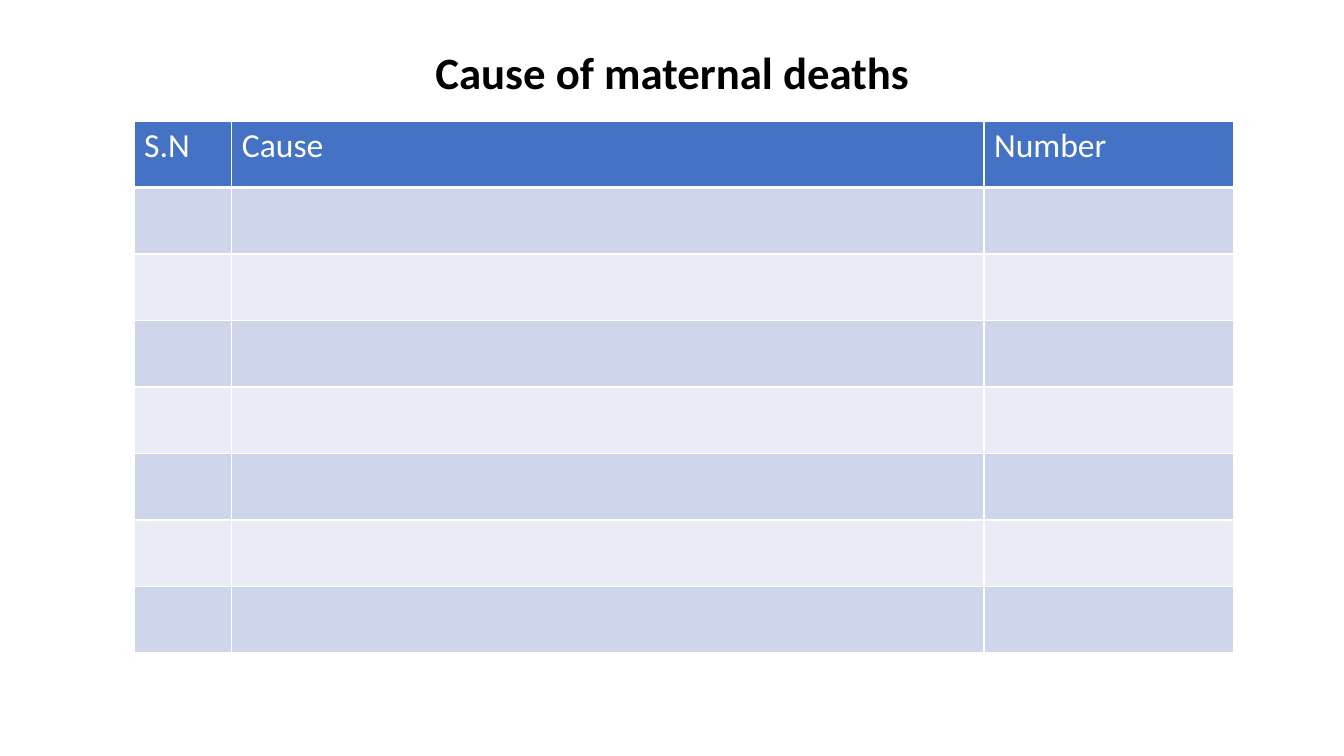
from dataclasses import dataclass
from pptx import Presentation
from pptx.dml.color import RGBColor as Rgb
from pptx.enum.text import MSO_ANCHOR as Anchor, PP_ALIGN as Align
from pptx.oxml import parse_xml
from pptx.oxml.ns import nsdecls
from pptx.util import Pt

PX = 9144  # one px is a hundredth of an inch


@dataclass(frozen=True)
class Theme:
    font: str = "Calibri"
    ink: str = "000000"
    white: str = "FFFFFF"
    head: str = "4472C4"
    bands: tuple = ("CFD5EA", "E9EBF5")
    title: int = 32
    label: int = 24
    thin: int = 1
    thick: int = 3


THEME = Theme()
HEADS = ("S.N", "Cause", "Number")
COLS = (97, 746, 248)
ROWS, ROW = 8, 66


def box(*sizes):
    return [size * PX for size in sizes]


def style(font, size, color, bold):
    look = {"name": THEME.font, "size": Pt(size), "bold": bold}
    for key, value in look.items():
        setattr(font, key, value)
    font.color.rgb = Rgb.from_string(color)


def write(frame, text, size, color, bold=False):
    para = frame.paragraphs[0]
    run = para.add_run()
    run.text = text
    style(run.font, size, color, bold)
    return para


def add_title(slide, text):
    title = slide.shapes.title
    place = dict(zip(("left", "top", "width", "height"), box(92, 29, 1150, 91)))
    for key, value in place.items():
        setattr(title, key, value)
    frame = title.text_frame
    frame.vertical_anchor = Anchor.MIDDLE
    para = write(frame, text, THEME.title, THEME.ink, True)
    para.alignment = Align.CENTER
    para.line_spacing = 0.9


def paint(cell, color, base):
    # Borders come before the fill in the cell properties
    props = cell._tc.get_or_add_tcPr()
    for side in "LRTB":
        width = Pt(base if side == "B" else THEME.thin)
        props.append(parse_xml(
            f'<a:ln{side} {nsdecls("a")} w="{width}"><a:solidFill>'
            f'<a:srgbClr val="{THEME.white}"/></a:solidFill></a:ln{side}>'))
    cell.fill.solid()
    cell.fill.fore_color.rgb = Rgb.from_string(color)


def add_grid(slide):
    place = box(133, 120, sum(COLS), ROWS * ROW)
    table = slide.shapes.add_table(ROWS, len(COLS), *place).table
    for col, width in zip(table.columns, COLS):
        col.width = width * PX

    # Header row, then alternating bands
    for cell, text in zip(table.rows[0].cells, HEADS):
        paint(cell, THEME.head, THEME.thick)
        write(cell.text_frame, text, THEME.label, THEME.white)
    for row in range(1, ROWS):
        for cell in table.rows[row].cells:
            paint(cell, THEME.bands[(row - 1) % 2], THEME.thin)


def main():
    deck = Presentation()
    deck.slide_width, deck.slide_height = box(1333, 750)
    slide = deck.slides.add_slide(deck.slide_layouts[5])
    add_title(slide, "Cause of maternal deaths")
    add_grid(slide)
    deck.save("out.pptx")


if __name__ == "__main__":
    main()
